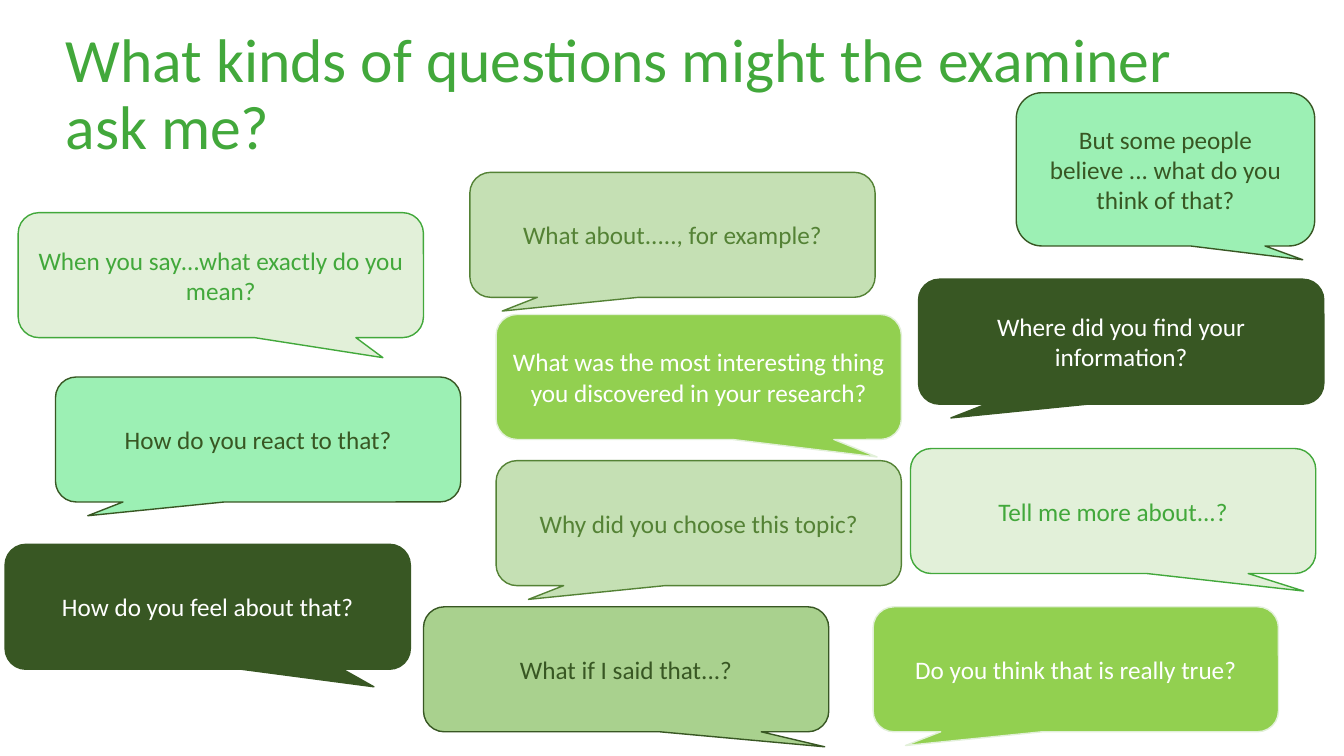
from pptx import Presentation
from pptx.dml.color import RGBColor
from pptx.enum.shapes import MSO_SHAPE
from pptx.enum.text import MSO_ANCHOR, PP_ALIGN
from pptx.util import Inches, Pt

CALLOUT = MSO_SHAPE.ROUNDED_RECTANGULAR_CALLOUT
MIDDLE = MSO_ANCHOR.MIDDLE
LEFT, CENTER = PP_ALIGN.LEFT, PP_ALIGN.CENTER

WHITE = RGBColor(0xFF, 0xFF, 0xFF)
GREEN = RGBColor(0x42, 0xA8, 0x3B)
DARK = RGBColor(0x38, 0x57, 0x23)
MOSS = RGBColor(0x54, 0x82, 0x35)
LIME = RGBColor(0x92, 0xD0, 0x50)
MINT = RGBColor(0x9C, 0xF0, 0xB4)
PALE = RGBColor(0xE2, 0xF0, 0xD9)
SAGE = RGBColor(0xC5, 0xE0, 0xB4)
LEAF = RGBColor(0xA9, 0xD1, 0x8E)

# Colour schemes: fill, outline, text
PALE_SCHEME = (PALE, GREEN, GREEN)
MINT_SCHEME = (MINT, DARK, DARK)
DARK_SCHEME = (DARK, DARK, WHITE)
LIME_SCHEME = (LIME, PALE, WHITE)
SAGE_SCHEME = (SAGE, MOSS, MOSS)
LEAF_SCHEME = (LEAF, DARK, DARK)

BUBBLE_SIZE = (4.02, 1.24)
SMALL_SIZE = (2.96, 1.52)
LEFT_TAIL = (-0.42, 0.61)


def write_text(frame, text, size=18, color=WHITE, align=CENTER, spacing=1.0):
    frame.word_wrap = True
    frame.vertical_anchor = MIDDLE
    paragraph = frame.paragraphs[0]
    paragraph.alignment = align
    paragraph.line_spacing = spacing
    run = paragraph.add_run()
    run.text = text
    run.font.name = "Calibri"
    run.font.size = Pt(size)
    run.font.color.rgb = color


prs = Presentation()
prs.slide_width = Inches(13.33)
prs.slide_height = Inches(7.5)
slide = prs.slides.add_slide(prs.slide_layouts[5])

# Title
title = slide.shapes.title
title.left, title.top = Inches(0.55), Inches(0.23)
title.width, title.height = Inches(11.5), Inches(1.45)
write_text(title.text_frame, "What kinds of questions might the examiner ask me?",
           size=44, color=GREEN, align=LEFT, spacing=0.9)

# Questions: left, top, size, tail tip, scheme, text
questions = [
    (0.18, 2.11, BUBBLE_SIZE, (0.4, 0.66), PALE_SCHEME,
     "When you say…what exactly do you mean?"),
    (10.08, 0.92, SMALL_SIZE, (0.46, 0.59), MINT_SCHEME,
     "But some people believe ... what do you think of that?"),
    (9.11, 2.77, BUBBLE_SIZE, LEFT_TAIL, DARK_SCHEME,
     "Where did you find your information?"),
    (4.92, 3.12, BUBBLE_SIZE, (0.44, 0.64), LIME_SCHEME,
     "What was the most interesting thing you discovered in your research?"),
    (9.03, 4.45, BUBBLE_SIZE, (0.47, 0.64), PALE_SCHEME,
     "Tell me more about...?"),
    (4.92, 4.57, BUBBLE_SIZE, LEFT_TAIL, SAGE_SCHEME,
     "Why did you choose this topic?"),
    (4.2, 6.02, BUBBLE_SIZE, (0.49, 0.62), LEAF_SCHEME,
     "What if I said that...?"),
    (4.66, 1.71, BUBBLE_SIZE, LEFT_TAIL, SAGE_SCHEME,
     "What about....., for example?"),
    (0.05, 5.4, BUBBLE_SIZE, (0.41, 0.64), DARK_SCHEME,
     "How do you feel about that?"),
    (8.66, 6.02, BUBBLE_SIZE, LEFT_TAIL, LIME_SCHEME,
     "Do you think that is really true?"),
    (0.55, 3.74, BUBBLE_SIZE, LEFT_TAIL, MINT_SCHEME,
     "How do you react to that?"),
]

# Speech bubbles
for left, top, (width, height), tail, (fill, outline, ink), question in questions:
    bubble = slide.shapes.add_shape(CALLOUT, Inches(left), Inches(top),
                                    Inches(width), Inches(height))
    bubble.adjustments[0], bubble.adjustments[1] = tail
    bubble.shadow.inherit = False
    bubble.fill.solid()
    bubble.fill.fore_color.rgb = fill
    bubble.line.color.rgb = outline
    bubble.line.width = Pt(1)
    write_text(bubble.text_frame, question, color=ink)

prs.save("out.pptx")
